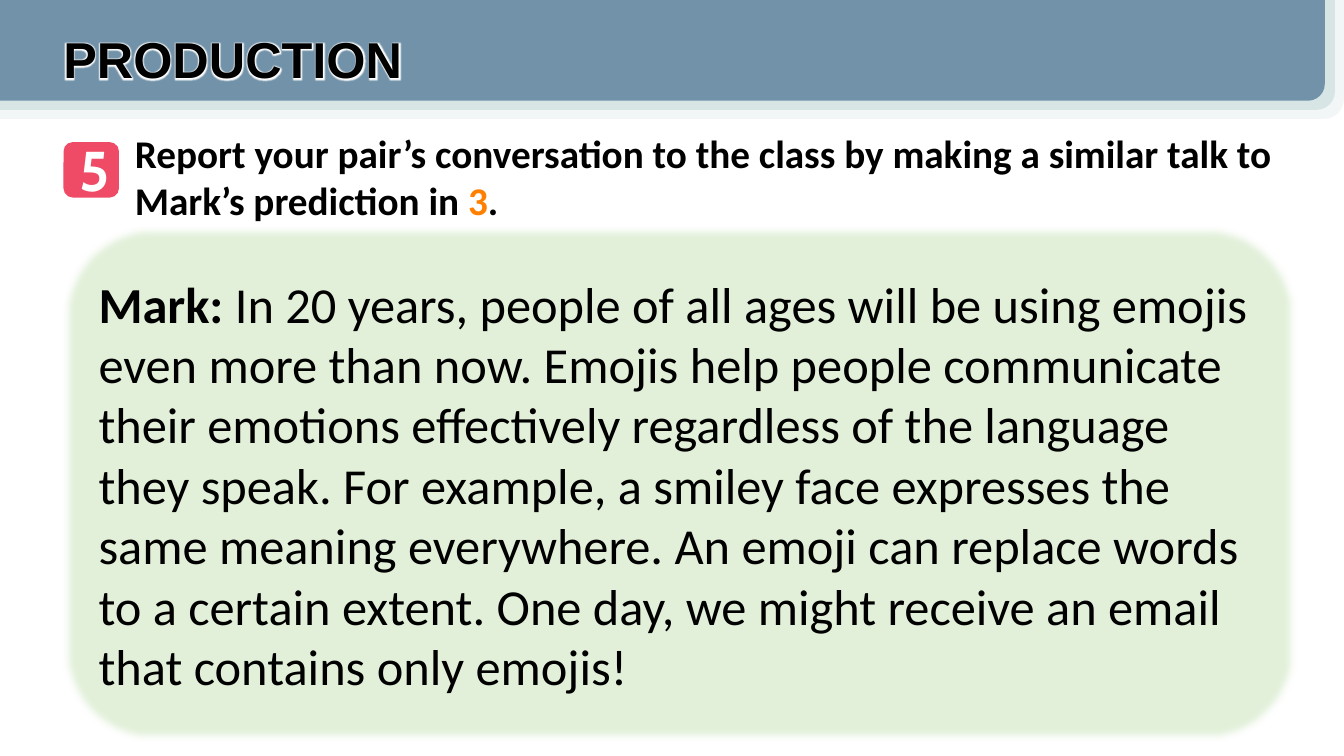
from lxml.etree import SubElement
from pptx import Presentation
from pptx.dml.color import RGBColor
from pptx.enum.shapes import MSO_SHAPE
from pptx.enum.text import MSO_ANCHOR, PP_ALIGN
from pptx.oxml.ns import qn
from pptx.util import Inches, Pt

BLACK = RGBColor(0x00, 0x00, 0x00)
WHITE = RGBColor(0xFF, 0xFF, 0xFF)
ORANGE = RGBColor(0xFF, 0x7F, 0x00)
PINK = RGBColor(0xEF, 0x4B, 0x66)
GREEN = RGBColor(0xE2, 0xF0, 0xD9)
BANNER_LAYERS = [
    (13.33, 1.18, RGBColor(0xF3, 0xF6, 0xF6)),
    (13.24, 1.09, RGBColor(0xD8, 0xE5, 0xE5)),
    (13.14, 1.0, RGBColor(0x71, 0x92, 0xA9)),
]
SPEECH = (
    " In 20 years, people of all ages will be using emojis even more than now. "
    "Emojis help people communicate their emotions effectively regardless of the "
    "language they speak. For example, a smiley face expresses the same meaning "
    "everywhere. An emoji can replace words to a certain extent. One day, we might "
    "receive an email that contains only emojis!"
)


def add_panel(page, kind, left, top, width, height, color):
    """Add a borderless filled shape."""
    panel = page.shapes.add_shape(
        kind, Inches(left), Inches(top), Inches(width), Inches(height))
    panel.shadow.inherit = False
    panel.fill.solid()
    panel.fill.fore_color.rgb = color
    panel.line.fill.background()
    return panel


def add_banner(page):
    """Stack the header layers, each rounded at the lower right corner."""
    for width, height, color in BANNER_LAYERS:
        layer = add_panel(page, MSO_SHAPE.ROUND_1_RECTANGLE,
                          0, 0, width, height, color)
        layer.element.spPr.find(qn("a:xfrm")).set("flipV", "1")


def add_box(page, left, top, width, height):
    """Add a wrapping text box and return it."""
    box = page.shapes.add_textbox(
        Inches(left), Inches(top), Inches(width), Inches(height))
    box.text_frame.word_wrap = True
    return box


def add_span(para, text, *, size, font="Calibri", color=BLACK, bold=True):
    """Append a formatted run to a paragraph."""
    span = para.add_run()
    span.text = text
    span.font.size = Pt(size)
    span.font.bold = bold
    span.font.color.rgb = color
    span.font.name = font
    return span


def add_glow(span, radius, color):
    """Put a soft halo around the letters of a run."""
    fill = span.font.fill._xPr.find(qn("a:solidFill"))
    effects = SubElement(fill.getparent(), qn("a:effectLst"))
    glow = SubElement(effects, qn("a:glow"), rad=str(radius))
    SubElement(glow, qn("a:srgbClr"), val=str(color))
    fill.addnext(effects)


def soften_edges(panel, radius):
    """Fade the outline of a shape."""
    effects = panel.element.spPr.find(qn("a:effectLst"))
    SubElement(effects, qn("a:softEdge"), rad=str(radius))


def add_task(page):
    """Add the instruction with its numbered badge."""
    para = add_box(page, 1.24, 1.23, 11.83, 1.04).text_frame.paragraphs[0]
    add_span(para, "Report your pair’s conversation to the class by making "
                   "a similar talk to Mark’s prediction in ", size=28)
    add_span(para, "3", size=28, color=ORANGE)
    add_span(para, ".", size=28)
    add_panel(page, MSO_SHAPE.ROUNDED_RECTANGLE, 0.63, 1.41, 0.55, 0.55, PINK)
    para = add_box(page, 0.69, 1.3, 0.43, 0.77).text_frame.paragraphs[0]
    para.alignment = PP_ALIGN.CENTER
    add_span(para, "5", size=40, font="Cabin", color=WHITE)


def add_title(page):
    """Add the haloed section title."""
    para = add_box(page, 0.53, 0.23, 4.52, 0.71).text_frame.paragraphs[0]
    span = add_span(para, "PRODUCTION", size=36, font="Arial")
    add_glow(span, Pt(5), WHITE)


def add_speech(page):
    """Add the soft-edged panel with the model talk."""
    panel = add_panel(page, MSO_SHAPE.ROUNDED_RECTANGLE,
                      0.63, 2.25, 12.23, 5.11, GREEN)
    soften_edges(panel, Pt(5))
    frame = panel.text_frame
    frame.word_wrap = True
    frame.vertical_anchor = MSO_ANCHOR.MIDDLE
    para = frame.paragraphs[0]
    para.alignment = PP_ALIGN.LEFT
    add_span(para, "Mark:", size=36)
    add_span(para, SPEECH, size=36, bold=False)


def main():
    """Build the slide and save it."""
    deck = Presentation()
    deck.slide_width = Inches(13.33)
    deck.slide_height = Inches(7.5)
    page = deck.slides.add_slide(deck.slide_layouts[6])
    add_banner(page)
    add_task(page)
    add_title(page)
    add_speech(page)
    deck.save("out.pptx")


if __name__ == "__main__":
    main()
